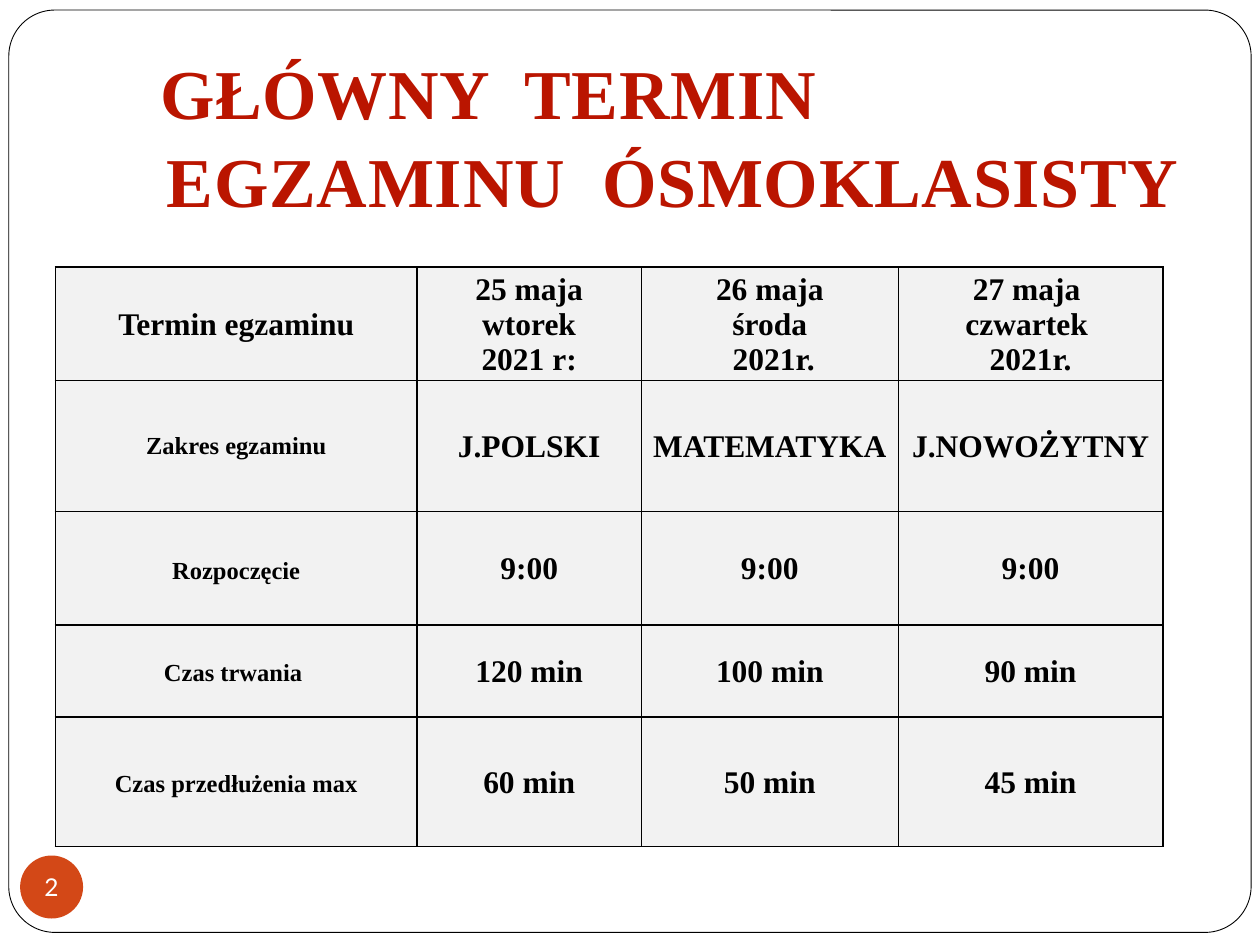
from dataclasses import dataclass

from lxml.etree import SubElement
from pptx import Presentation
from pptx.dml.color import RGBColor
from pptx.enum.shapes import MSO_SHAPE as Shape
from pptx.enum.text import MSO_ANCHOR as Anchor, PP_ALIGN as Align
from pptx.oxml.ns import qn
from pptx.util import Inches, Pt

SERIF, SANS = "Times New Roman", "Lato"
BLACK, WHITE, RED, ORANGE, GREY = "000000", "FFFFFF", "BA1500", "D34817", "F2F2F2"


@dataclass
class ExamRow:
    label: str
    days: list[str]
    height: float
    label_size: int = 14
    label_spacing: float = 1.0


COLUMN_WIDTHS = [2.87, 1.78, 2.04, 2.1]
EXAM_ROWS = [
    ExamRow("Termin egzaminu",
            ["25 maja\nwtorek\n2021 r:", "26 maja\nśroda\n 2021r.",
             "27 maja \nczwartek \n2021r."], 0.9, label_size=18),
    ExamRow("Zakres egzaminu", ["J.POLSKI", "MATEMATYKA", "J.NOWOŻYTNY"], 1.04),
    ExamRow("Rozpoczęcie", ["9:00"] * 3, 0.9, label_spacing=1.15),
    ExamRow("Czas trwania ", ["120 min", "100 min", "90 min"], 0.73, label_spacing=1.15),
    ExamRow("Czas przedłużenia max", ["60 min", "50 min", "45 min"], 1.03,
            label_spacing=1.15),
]


def rgb(colour: str) -> RGBColor:
    return RGBColor.from_string(colour)


def write(frame, text: str, size: float, colour: str, font: str = SERIF,
          bold: bool = True, spacing: float = 1.0) -> None:
    """Fill a text frame with one centred paragraph per line."""
    for index, line in enumerate(text.split("\n")):
        paragraph = frame.paragraphs[0] if index == 0 else frame.add_paragraph()
        paragraph.alignment = Align.CENTER
        paragraph.line_spacing = spacing
        run = paragraph.add_run()
        run.text = line
        run.font.name, run.font.size, run.font.bold = font, Pt(size), bold
        run.font.color.rgb = rgb(colour)


def set_margins(target, left: float, top: float, right: float, bottom: float) -> None:
    target.margin_left, target.margin_top = Inches(left), Inches(top)
    target.margin_right, target.margin_bottom = Inches(right), Inches(bottom)


def add_plain_shape(slide, kind: Shape, box: tuple, fill: str):
    shape = slide.shapes.add_shape(kind, *map(Inches, box))
    shape.shadow.inherit = False
    shape.fill.solid()
    shape.fill.fore_color.rgb = rgb(fill)
    shape.line.fill.background()
    return shape


def add_borders(cell, colour: str, width: float) -> None:
    properties = cell._tc.get_or_add_tcPr()
    for index, side in enumerate(("lnL", "lnR", "lnT", "lnB")):
        line = properties.makeelement(qn(f"a:{side}"), {"w": str(Pt(width))})
        fill = SubElement(line, qn("a:solidFill"))
        SubElement(fill, qn("a:srgbClr"), val=colour)
        properties.insert(index, line)


def fill_cell(cell, text: str, size: float, spacing: float = 1.0) -> None:
    cell.fill.solid()
    cell.fill.fore_color.rgb = rgb(GREY)
    cell.vertical_anchor = Anchor.MIDDLE
    set_margins(cell, 0.07, 0.01, 0.07, 0)
    write(cell.text_frame, text, size, BLACK, spacing=spacing)
    add_borders(cell, BLACK, 1)


def add_title(slide) -> None:
    title = slide.shapes.title
    title.left, title.top = Inches(0.83), Inches(0.28)
    title.width, title.height = Inches(8.69), Inches(1.45)
    frame = title.text_frame
    frame.word_wrap = True
    frame.vertical_anchor = Anchor.TOP
    set_margins(frame, 0.1, 0.08, 0.1, 0.05)
    write(frame, "GŁÓWNY  TERMIN\nEGZAMINU  ÓSMOKLASISTY", 40, RED, spacing=1.05)
    for paragraph in frame.paragraphs:
        paragraph.space_before = Pt(0)
        paragraph.runs[0].font._element.set("spc", "50")
    # The first line starts near the left edge of the second one
    first_line = frame.paragraphs[0]
    first_line.alignment = Align.LEFT
    first_line._p.get_or_add_pPr().set("marL", str(Inches(0.34)))


def add_exam_table(slide) -> None:
    table = slide.shapes.add_table(
        len(EXAM_ROWS), len(COLUMN_WIDTHS), Inches(0.44), Inches(2.12),
        Inches(sum(COLUMN_WIDTHS)), Inches(sum(row.height for row in EXAM_ROWS))).table
    for column, width in zip(table.columns, COLUMN_WIDTHS):
        column.width = Inches(width)
    for index, exam in enumerate(EXAM_ROWS):
        table.rows[index].height = Inches(exam.height)
        fill_cell(table.cell(index, 0), exam.label, exam.label_size, exam.label_spacing)
        for day, text in enumerate(exam.days, start=1):
            fill_cell(table.cell(index, day), text, 18)


def main() -> None:
    deck = Presentation()
    deck.slide_width, deck.slide_height = Inches(10), Inches(7.5)
    slide = deck.slides.add_slide(deck.slide_layouts[5])

    # Rounded page frame, behind the title
    page_frame = add_plain_shape(slide, Shape.ROUNDED_RECTANGLE,
                                 (0.07, 0.08, 9.86, 7.32), WHITE)
    page_frame.adjustments[0] = 0.05
    page_frame.line.color.rgb = rgb(BLACK)
    page_frame.line.width = Pt(0.5)
    slide.shapes.title.element.addprevious(page_frame.element)

    # Page number badge
    badge = add_plain_shape(slide, Shape.OVAL, (0.16, 6.79, 0.5, 0.5), ORANGE)
    badge.text_frame.word_wrap = False
    badge.text_frame.vertical_anchor = Anchor.MIDDLE
    set_margins(badge.text_frame, 0, 0, 0, 0)
    write(badge.text_frame, "2", 14, WHITE, font=SANS, bold=False)

    add_title(slide)
    add_exam_table(slide)
    deck.save("out.pptx")


if __name__ == "__main__":
    main()
